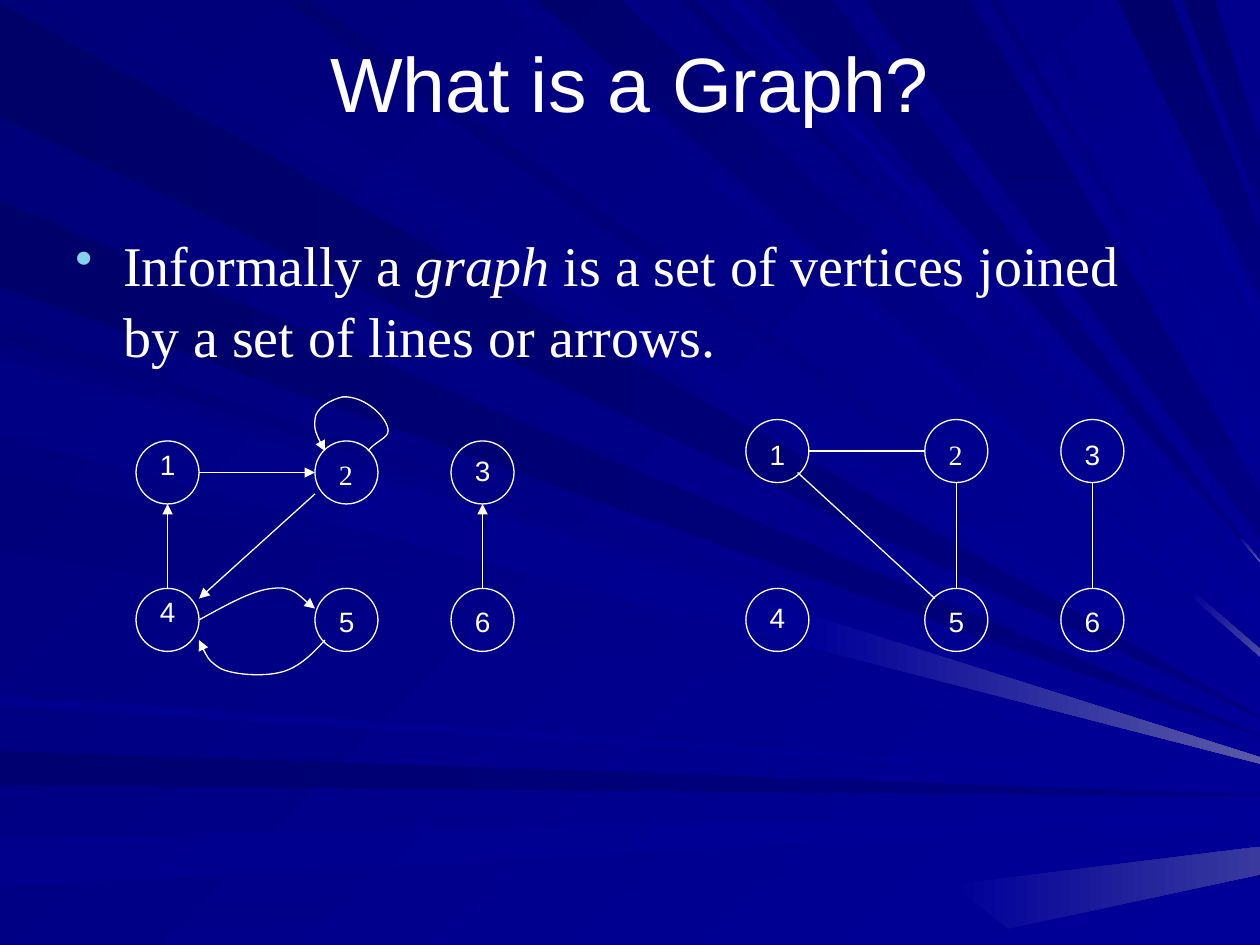
from lxml import etree
from pptx import Presentation, util as u
from pptx.dml.color import RGBColor
from pptx.enum import shapes, text
from pptx.oxml import ns

PX = 9144  # EMU per px, 100 px to the inch
WIDTH, HEIGHT = 1000, 750
COLORS = {"white": "FFFFFF", "bullet": "86D1EC", "back_dark": "000078", "back_light": "000099",
          "shade": "000080", "glow": "5A5AA6", "faint_glow": "4A4AA1", "low_glow": "39399E"}
NODE, LABEL_WIDTH, LABEL_HEIGHT = 50, 32, 37
COLUMNS = (0, 142, 250)

# Each ray: side it enters from, its span there, its span on the right edge, first and last colour
RAYS = [
    ("left", (2, 93), (569, 570), "000069", "shade"),
    ("top", (101, 26), (562, 563), "00007B", "back_light"),
    ("left", (596, 623), (631, 632), "000071", "shade"),
    ("left", (665, 704), (643, 651), "00008C", "back_light"),
    ("left", (735, 750), (662, 662), "000085", "back_light"),
    ("left", (258, 270), (589, 589), "000076", "back_light"),
    ("left", (159, 228), (584, 585), "00006B", "shade"),
    ("top", (416, 398), (515, 521), "000083", "back_light"),
    ("top", (492, 426), (479, 507), "00006D", "back_light"),
    ("top", (552, 540), (463, 463), "000073", "back_light"),
    ("top", (661, 606), (445, 446), "000073", "shade"),
    ("top", (930, 887), (183, 237), "00006B", "shade"),
    ("top", (964, 939), (114, 167), "00006D", "shade"),
    ("left", (278, 342), (596, 602), "00007E", "back_light"),
    ("left", (374, 437), (605, 606), "00007B", "back_light"),
    ("left", (552, 560), (621, 623), "00008E", "back_light"),
    ("top", (247, 225), (547, 552), "000070", "back_light"),
    ("top", (588, 577), (453, 454), "00008E", "back_light"),
    ("top", (770, 686), (390, 428), "000073", "shade"),
    ("top", (792, 785), (354, 360), "000078", "back_light"),
    ("top", (824, 815), (335, 336), "000085", "back_light"),
    ("top", (872, 865), (249, 258), "00008A", "back_light"),
    ("left", (283, 347), (601, 606), "000085", "back_light"),
]
# Bright ends, by the first colour and entry span of their ray: start along the ray, last colour
TIPS = {(416, 398): (0.91, "faint_glow"), (661, 606): (0.96, "glow"), (283, 347): (0.64, "glow")}
LOW_BEAM = [(1000, 694), (1000, 672), (756, 702), (800, 737)]

# Label drops are measured from the top of each node, for nodes 1 to 6
DIRECTED = {
    "row_gap": 117,
    "label_drops": (0, 8, 5, 0, 8, 8),
    "edges": [(25, 117, 25, 50), (50, 25, 142, 25), (142, 42, 50, 125), (275, 117, 275, 50)],
    "curves": [
        [(184, 8), (190, 0), (200, -2), (200, -8), (200, -18), (182, -36), (164, -35),
         (155, -33), (142, -26), (142, -17), (141, -9), (145, -1), (150, 8)],
        [(50, 142), (72, 130), (93, 118), (109, 117), (124, 115), (136, 129), (142, 133)],
        [(150, 158), (140, 169), (130, 179), (117, 183), (100, 188), (74, 185), (66, 180),
         (57, 174), (53, 165), (50, 158)],
    ],
    "arrows": True,
}
UNDIRECTED = {
    "row_gap": 134,
    "label_drops": (9, 9, 9, 5, 8, 8),
    "edges": [(41, 42, 150, 142), (50, 25, 142, 25), (167, 134, 167, 50), (275, 134, 275, 50)],
    "curves": [],
    "arrows": False,
}


def rgb(name):
    return RGBColor.from_string(COLORS.get(name, name))


def set_gradient(fill, first, last, angle):
    """Fill with two colours at a clockwise angle."""
    fill.gradient()
    fill.gradient_angle = -angle % 360
    for stop, color in zip(fill.gradient_stops, (first, last)):
        stop.color.rgb = rgb(color)


def set_line(shape, arrow=False):
    shape.line.color.rgb = rgb("white")
    shape.line.width = u.Pt(0.75)
    if arrow:
        line = shape.line._get_or_add_ln()
        etree.SubElement(line, ns.qn("a:tailEnd"), type="triangle")


def set_font(font, name, size):
    font.name, font.size = name, u.Pt(size)
    font.color.rgb = rgb("white")


def add_outline(slide, points, closed):
    builder = slide.shapes.build_freeform(*points[0], scale=PX)
    builder.add_line_segments(points[1:], close=closed)
    shape = builder.convert_to_shape()
    shape.shadow.inherit = False
    return shape


def add_beam(slide, points, first, last, angle):
    beam = add_outline(slide, points, True)
    set_gradient(beam.fill, first, last, angle)
    beam.line.fill.background()


def point_between(start, end, share):
    return tuple(round(a + (b - a) * share) for a, b in zip(start, end))


def add_background(slide):
    set_gradient(slide.background.fill, "back_dark", "back_light", 45)
    for side, entry, leave, first, last in RAYS:
        starts = [(0, v) if side == "left" else (v, 0) for v in entry]
        ends = [(WIDTH, v) for v in leave]
        shade_angle = 0 if side == "left" else 90
        angle = shade_angle if last == "shade" else 45
        add_beam(slide, starts + ends[::-1], first, last, angle)
        if entry in TIPS:
            share, glow = TIPS[entry]
            tip_starts = [point_between(a, b, share) for a, b in zip(starts, ends)]
            add_beam(slide, tip_starts + ends[::-1], "back_light", glow, shade_angle // 2)
    add_beam(slide, LOW_BEAM, "back_light", "low_glow", 0)


def add_text(slide, left, top, width, height):
    return slide.shapes.add_textbox(*(v * PX for v in (left, top, width, height))).text_frame


def add_title(slide, left, top, width, height):
    frame = add_text(slide, left, top, width, height)
    frame.word_wrap = True
    frame.vertical_anchor = text.MSO_ANCHOR.MIDDLE
    frame.text = "What is a Graph?"
    paragraph = frame.paragraphs[0]
    paragraph.alignment = text.PP_ALIGN.CENTER
    set_font(paragraph.runs[0].font, "Arial", 44)


def add_definition(slide, left, top, width, height):
    frame = add_text(slide, left, top, width, height)
    frame.word_wrap = True
    paragraph = frame.paragraphs[0]
    paragraph.line_spacing = 1.06
    properties = paragraph._p.get_or_add_pPr()
    properties.set("marL", str(38 * PX))
    properties.set("indent", str(-38 * PX))
    bullet_color = etree.SubElement(properties, ns.qn("a:buClr"))
    etree.SubElement(bullet_color, ns.qn("a:srgbClr"), val=COLORS["bullet"])
    etree.SubElement(properties, ns.qn("a:buSzPct"), val="90000")
    etree.SubElement(properties, ns.qn("a:buChar"), char="•")
    for words in ("Informally a ", "graph", " is a set of vertices joined by a set of lines or arrows."):
        run = paragraph.add_run()
        run.text = words
        set_font(run.font, "Times New Roman", 32)
        run.font.italic = words == "graph"


def add_node(slide, number, left, top, label_drop):
    circle = slide.shapes.add_shape(shapes.MSO_SHAPE.OVAL, left * PX, top * PX, NODE * PX, NODE * PX)
    circle.shadow.inherit = False
    circle.fill.background()
    set_line(circle)
    label_left = left + (NODE - LABEL_WIDTH) // 2
    frame = add_text(slide, label_left, top + label_drop, LABEL_WIDTH, LABEL_HEIGHT)
    frame.word_wrap = False
    frame.auto_size = text.MSO_AUTO_SIZE.SHAPE_TO_FIT_TEXT
    frame.text = str(number)
    set_font(frame.paragraphs[0].runs[0].font, "Times New Roman" if number == 2 else "Arial", 16)


def add_edge(slide, ends, arrow):
    edge = slide.shapes.add_connector(shapes.MSO_CONNECTOR.STRAIGHT, *(v * PX for v in ends))
    set_line(edge, arrow)
    etree.SubElement(edge._element.spPr, ns.qn("a:effectLst"))


def add_curve(slide, points, arrow):
    """Draw a Bézier curve: a start, then two control points and an end per segment."""
    curve = add_outline(slide, points, False)
    curve.fill.background()
    set_line(curve, arrow)
    lines = list(curve._element.iter(ns.qn("a:lnTo")))
    for first in range(0, len(lines), 3):
        segment = etree.Element(ns.qn("a:cubicBezTo"))
        lines[first].addprevious(segment)
        for line in lines[first:first + 3]:
            segment.append(line[0])
            line.getparent().remove(line)


def add_graph(slide, left, top, graph):
    for index, drop in enumerate(graph["label_drops"]):
        row, column = divmod(index, len(COLUMNS))
        add_node(slide, index + 1, left + COLUMNS[column], top + row * graph["row_gap"], drop)
    for x1, y1, x2, y2 in graph["edges"]:
        add_edge(slide, (left + x1, top + y1, left + x2, top + y2), graph["arrows"])
    for points in graph["curves"]:
        add_curve(slide, [(left + x, top + y) for x, y in points], graph["arrows"])


def main():
    presentation = Presentation()
    presentation.slide_width, presentation.slide_height = WIDTH * PX, HEIGHT * PX
    slide = presentation.slides.add_slide(presentation.slide_layouts[6])
    add_background(slide)
    add_title(slide, 0, 30, WIDTH, 70)
    add_definition(slide, 50, 175, 900, 495)
    add_graph(slide, 108, 350, DIRECTED)
    add_graph(slide, 592, 333, UNDIRECTED)
    presentation.save("out.pptx")


if __name__ == "__main__":
    main()
